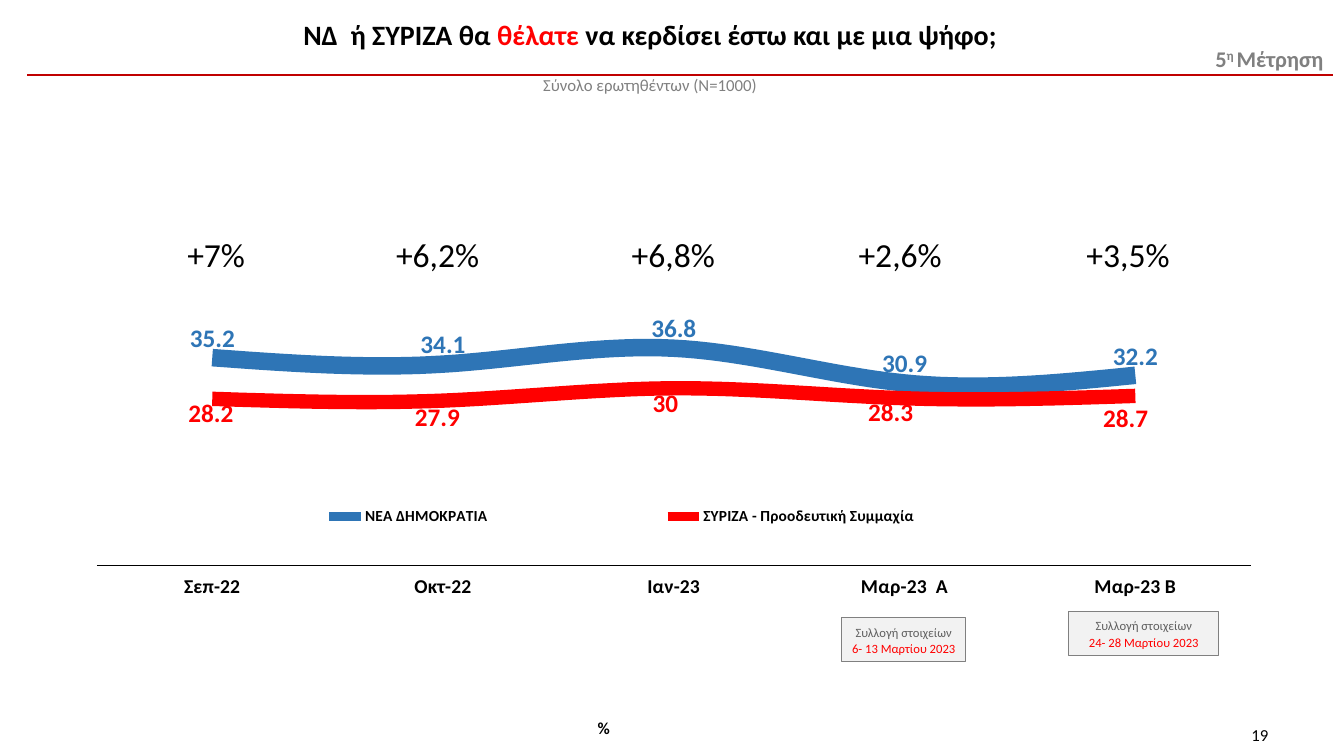
from lxml import etree
from pptx import Presentation
from pptx.chart.data import CategoryChartData
from pptx.dml.color import RGBColor
from pptx.enum.chart import (XL_CHART_TYPE, XL_LABEL_POSITION, XL_LEGEND_POSITION,
                             XL_TICK_LABEL_POSITION, XL_TICK_MARK)
from pptx.enum.shapes import MSO_CONNECTOR, MSO_SHAPE
from pptx.enum.text import MSO_ANCHOR, PP_ALIGN
from pptx.oxml.ns import qn
from pptx.util import Pt

LINE_CHART = XL_CHART_TYPE.LINE
ABOVE = XL_LABEL_POSITION.ABOVE
LEGEND_RIGHT = XL_LEGEND_POSITION.RIGHT
LABELS_LOW = XL_TICK_LABEL_POSITION.LOW
NO_TICK = XL_TICK_MARK.NONE
STRAIGHT = MSO_CONNECTOR.STRAIGHT
RECTANGLE = MSO_SHAPE.RECTANGLE
MIDDLE, TOP = MSO_ANCHOR.MIDDLE, MSO_ANCHOR.TOP
LEFT, CENTER, RIGHT = PP_ALIGN.LEFT, PP_ALIGN.CENTER, PP_ALIGN.RIGHT

COLORS = {"black": "000000", "red": "FF0000", "blue": "2E75B6", "rule": "C00000",
          "gray": "808080", "dark_gray": "5F5F5F", "panel": "F2F2F2"}
FONT = "Calibri"
CHART_W, CHART_H = 824.4, 297.4
MONTHS = ["Σεπ-22", "Οκτ-22", "Ιαν-23", "Mαρ-23  Α", "Mαρ-23 B"]
PARTIES = [("ΝΕΑ ΔΗΜΟΚΡΑΤΙΑ", [35.2, 34.1, 36.8, 30.9, 32.2], "blue", 12.5),
           ("ΣΥΡΙΖΑ - Προοδευτική Συμμαχία", [28.2, 27.9, 30, 28.3, 28.7], "red", 10.25)]
SYRIZA_LABEL_SHIFTS = [(-1, 24), (-4, 26), (-6, 25), (-10, 24), (-7, 30)]
LEADS = [("+7%", 126.7), ("+6,2%", 275.8), ("+6,8%", 444.2),
         ("+2,6%", 606.2), ("+3,5%", 769)]
SURVEY_DATES = [("6- 13 Μαρτίου 2023", 601.2, 441.4, 88.6),
                ("24- 28 Μαρτίου 2023", 763.3, 437, 107.3)]


def rgb(name):
    """Return the named colour."""
    return RGBColor.from_string(COLORS[name])


def style(font, size, color=None, bold=False, name=FONT):
    """Set size, weight, typeface and, if given, colour."""
    font.size, font.bold, font.name = Pt(size), bold, name
    if color:
        font.color.rgb = rgb(color)


def add_run(p, text, color=None):
    """Append a run, coloured if a colour is given."""
    r = p.add_run()
    r.text = text
    if color:
        r.font.color.rgb = rgb(color)
    return r


def add_text(s, x, y, w, h, text, size, color="black", bold=False,
             align=LEFT, wrap=False, anchor=TOP):
    """Add a one-paragraph text box and return its text frame."""
    tf = s.shapes.add_textbox(Pt(x), Pt(y), Pt(w), Pt(h)).text_frame
    tf.word_wrap, tf.vertical_anchor = wrap, anchor
    p = tf.paragraphs[0]
    p.alignment = align
    style(p.font, size, color, bold)
    if text:
        add_run(p, text)
    return tf


def add_header(s):
    """Add the rule, the wave mark, the question and its base."""
    rule = s.shapes.add_connector(STRAIGHT, Pt(19.4), Pt(53.3), Pt(952), Pt(53.3))
    rule.line.color.rgb, rule.line.width = rgb("rule"), Pt(1.5)
    etree.SubElement(rule._element.spPr, qn("a:effectLst"))

    p = add_text(s, 861.1, 28.8, 98.6, 26.6, "5", 16, "gray", True).paragraphs[0]
    ordinal = add_run(p, "η ")
    ordinal._r.get_or_add_rPr().set("baseline", "30000")
    add_run(p, "Μέτρηση")

    tf = add_text(s, 104.4, 8.6, 720, 90, "", 20, bold=True, align=CENTER, wrap=True)
    question = tf.paragraphs[0]
    add_run(question, "ΝΔ  ή ΣΥΡΙΖΑ θα ")
    add_run(question, "θέλατε", "red")
    add_run(question, " να κερδίσει έστω και με μια ψήφο;")
    base = tf.add_paragraph()
    base.alignment, base.line_spacing, base.space_before = CENTER, 1.1, Pt(16)
    style(base.font, 12, "gray")
    add_run(base, "Σύνολο ερωτηθέντων (Ν=1000)")


def make_layout(inner=False, **fractions):
    """Build a manual chart layout from fractions of the chart size."""
    layout = etree.Element(qn("c:layout"))
    manual = etree.SubElement(layout, qn("c:manualLayout"))
    if inner:
        etree.SubElement(manual, qn("c:layoutTarget")).set("val", "inner")
    if "w" in fractions:
        for mode in ("xMode", "yMode"):
            etree.SubElement(manual, qn(f"c:{mode}")).set("val", "edge")
    for key, value in fractions.items():
        etree.SubElement(manual, qn(f"c:{key}")).set("val", f"{value:.4f}")
    return layout


def set_layout(parent, index, layout):
    """Put a layout in a chart part in place of any it has."""
    for old in parent.findall(qn("c:layout")):
        parent.remove(old)
    parent.insert(index, layout)


def style_axes(chart):
    """Show months under a thin line and hide the value axis."""
    months, values = chart.category_axis, chart.value_axis
    months.tick_label_position = LABELS_LOW
    months.major_tick_mark = months.minor_tick_mark = NO_TICK
    months.format.line.color.rgb, months.format.line.width = rgb("black"), Pt(0.19)
    style(months.tick_labels.font, 14, "black", True)
    values.minimum_scale, values.maximum_scale, values.major_unit = 0, 60, 20
    values.has_major_gridlines = values.visible = False


def style_series(series, color, width):
    """Draw a smooth line with bold values above it."""
    series.smooth = True
    series.format.line.color.rgb, series.format.line.width = rgb(color), Pt(width)
    labels = series.data_labels
    labels.show_value, labels.position = True, ABOVE
    style(labels.font, 18, color, True)


def shift_labels(series, color, shifts):
    """Move each value label by an offset in points."""
    for i in range(len(shifts)):
        label = series.points[i].data_label
        style(label.font, 18, color, True)
        label.position = ABOVE
    for item, (dx, dy) in zip(series._element.xpath(".//c:dLbl"), shifts):
        set_layout(item, 1, make_layout(x=dx / CHART_W, y=dy / CHART_H))


def add_trend_chart(s):
    """Add the line chart of both parties."""
    data = CategoryChartData()
    data.categories = MONTHS
    for name, values, color, width in PARTIES:
        data.add_series(name, values)
    chart = s.shapes.add_chart(LINE_CHART, Pt(69.1), Pt(133.9), Pt(CHART_W),
                               Pt(CHART_H), data).chart
    style(chart.font, 10.8, "black", True, "Times New Roman")
    chart.has_title = False
    chart.plots[0].vary_by_categories = False
    style_axes(chart)
    for series, (name, values, color, width) in zip(chart.plots[0].series, PARTIES):
        style_series(series, color, width)
    shift_labels(chart.plots[0].series[1], "red", SYRIZA_LABEL_SHIFTS)

    chart.has_legend = True
    legend = chart.legend
    legend.position, legend.include_in_layout = LEGEND_RIGHT, False
    style(legend.font, 11, "black", True)
    set_layout(legend._element, 1, make_layout(x=0.05, y=0.74, w=0.81, h=0.1))
    set_layout(chart._chartSpace.chart.plotArea, 0,
               make_layout(inner=True, x=0, y=0.058, w=1, h=0.849))


def add_survey_box(s, dates, x, y, w):
    """Add a box with the fieldwork dates."""
    sp = s.shapes.add_shape(RECTANGLE, Pt(x), Pt(y), Pt(w), Pt(31))
    sp.shadow.inherit = False
    sp.fill.solid()
    sp.fill.fore_color.rgb = rgb("panel")
    sp.line.color.rgb, sp.line.width = rgb("gray"), Pt(0.75)
    tf = sp.text_frame
    tf.word_wrap, tf.vertical_anchor = True, MIDDLE
    tf.margin_left = tf.margin_right = 0
    lines = [("Συλλογή στοιχείων", "dark_gray"), (dates, "red")]
    for i, (text, color) in enumerate(lines):
        p = tf.add_paragraph() if i else tf.paragraphs[0]
        p.alignment, p.line_spacing = CENTER, 1.1
        style(p.font, 9, color)
        add_run(p, text)


def main():
    """Build the slide and save it."""
    prs = Presentation()
    prs.slide_width, prs.slide_height = Pt(960), Pt(540)
    s = prs.slides.add_slide(prs.slide_layouts[6])
    add_header(s)
    add_trend_chart(s)
    add_text(s, 763.2, 514.1, 149.8, 36, "19", 12, align=RIGHT, wrap=True)
    add_text(s, 419.8, 509, 23, 21.6, "%", 12, bold=True)
    for lead, x in LEADS:
        add_text(s, x, 163.2, 56 if lead == "+7%" else 74.2, 36, lead, 24, anchor=MIDDLE)
    for dates, x, y, w in SURVEY_DATES:
        add_survey_box(s, dates, x, y, w)
    prs.save("out.pptx")


if __name__ == "__main__":
    main()
